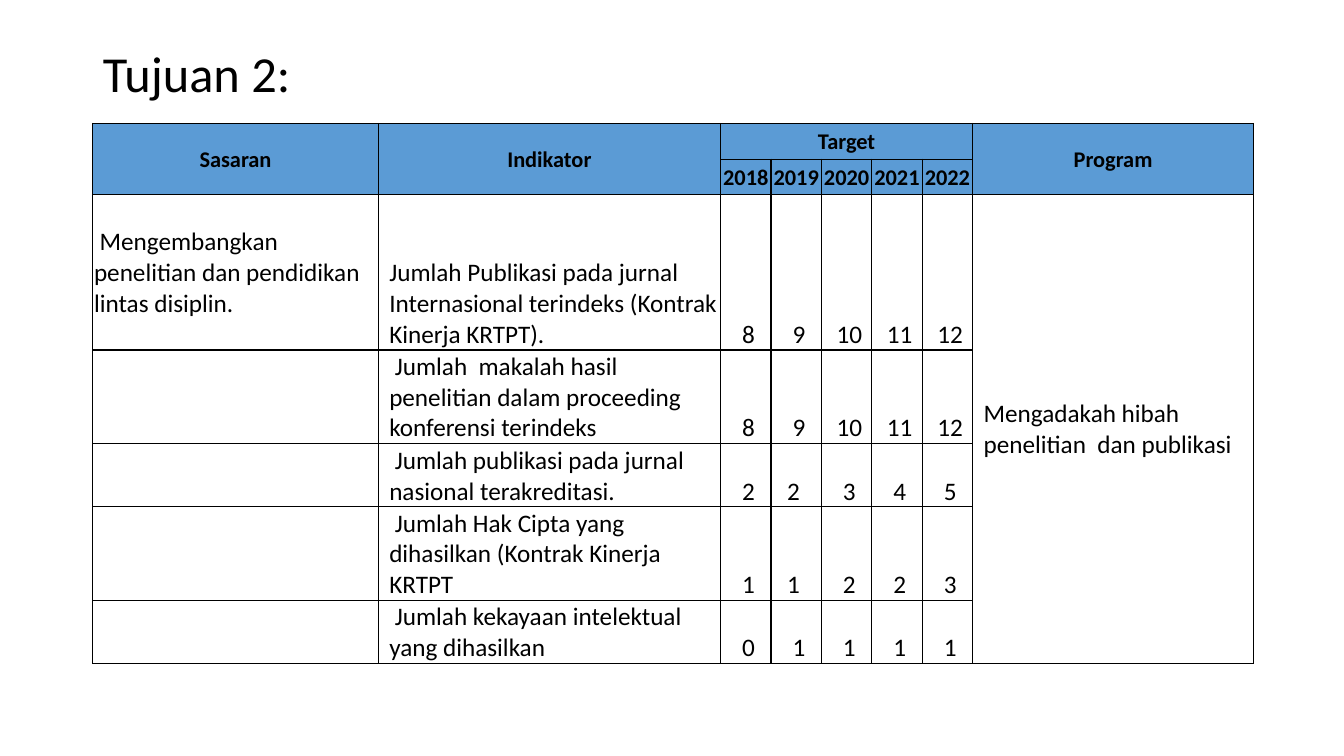
from lxml import etree
from pptx import Presentation
from pptx.dml.color import RGBColor
from pptx.enum.text import MSO_ANCHOR, PP_ALIGN
from pptx.oxml.ns import qn
from pptx.util import Cm, Pt

BLACK = RGBColor(0x00, 0x00, 0x00)
HEADER_BLUE = RGBColor(0x5B, 0x9B, 0xD5)
LEFT, CENTER = PP_ALIGN.LEFT, PP_ALIGN.CENTER
MIDDLE, BOTTOM = MSO_ANCHOR.MIDDLE, MSO_ANCHOR.BOTTOM

TITLE_FONT = {"name": "Calibri", "size": Pt(36), "bold": False}
HEADER_FONT = {"name": "Calibri", "size": Pt(16), "bold": True}
BODY_FONT = {"name": "Calibri", "size": Pt(18), "bold": False}

COLUMN_WIDTHS = [7.19, 8.63] + [1.27] * 5 + [7.08]
ROW_HEIGHTS = [0.9, 0.9, 3.91, 2.36, 1.59, 2.35, 1.59]
SIDE_MARGIN = 0.03
NUMBER_SHIFT = 0.14
TEXT_INDENT = 0.25

YEARS = ["2018", "2019", "2020", "2021", "2022"]
GOAL = "Mengembangkan penelitian dan pendidikan lintas disiplin."
PROGRAM = "Mengadakah hibah penelitian  dan publikasi"
INDICATORS = [
    ("Jumlah Publikasi pada jurnal Internasional terindeks (Kontrak Kinerja KRTPT).",
     [8, 9, 10, 11, 12]),
    ("Jumlah  makalah hasil penelitian dalam proceeding konferensi terindeks",
     [8, 9, 10, 11, 12]),
    ("Jumlah publikasi pada jurnal nasional terakreditasi.", [2, 2, 3, 4, 5]),
    ("Jumlah Hak Cipta yang dihasilkan (Kontrak Kinerja KRTPT", [1, 1, 2, 2, 3]),
    ("Jumlah kekayaan intelektual yang dihasilkan", [0, 1, 1, 1, 1]),
]
# Row and column of the numbers that sit left of the centre
LEFT_SHIFTED = {(4, 3), (5, 3)}


def format_font(font, values):
    for name, value in values.items():
        setattr(font, name, value)
    font.color.rgb = BLACK


def add_title(slide, text):
    title = slide.shapes.title
    title.left, title.top, title.width, title.height = Cm(2.34), Cm(1.02), Cm(29.21), Cm(1.8)
    title.text_frame.text = text
    title.text_frame.vertical_anchor = MIDDLE
    paragraph = title.text_frame.paragraphs[0]
    paragraph.alignment = LEFT
    paragraph.line_spacing = 0.9
    format_font(paragraph.font, TITLE_FONT)


def add_borders(cell):
    properties = cell._tc.get_or_add_tcPr()
    for side in ("a:lnL", "a:lnR", "a:lnT", "a:lnB"):
        line = etree.SubElement(properties, qn(side), w=str(Pt(1)))
        fill = etree.SubElement(line, qn("a:solidFill"))
        etree.SubElement(fill, qn("a:srgbClr"), val=str(BLACK))


def write_cell(cell, text, font=BODY_FONT, alignment=LEFT, anchor=BOTTOM,
               indent=0, first_line=0):
    cell.text = text
    cell.vertical_anchor = anchor
    paragraph = cell.text_frame.paragraphs[0]
    paragraph.alignment = alignment
    if indent or first_line:
        properties = paragraph._p.get_or_add_pPr()
        properties.set("marL", str(Cm(indent)))
        properties.set("indent", str(Cm(first_line)))
    format_font(paragraph.font, font)


def add_table(slide):
    shape = slide.shapes.add_table(
        len(ROW_HEIGHTS), len(COLUMN_WIDTHS), Cm(2.34), Cm(3.11),
        Cm(sum(COLUMN_WIDTHS)), Cm(sum(ROW_HEIGHTS)))
    table = shape.table
    table.first_row = table.horz_banding = False
    for column, width in zip(table.columns, COLUMN_WIDTHS):
        column.width = Cm(width)
    for index, (row, height) in enumerate(zip(table.rows, ROW_HEIGHTS)):
        row.height = Cm(height)
        for cell in row.cells:
            cell.margin_left = cell.margin_right = cell.margin_top = Cm(SIDE_MARGIN)
            cell.margin_bottom = 0
            add_borders(cell)
            if index < 2:
                cell.fill.solid()
                cell.fill.fore_color.rgb = HEADER_BLUE
            else:
                cell.fill.background()
    return table


def fill_header(table):
    for column in (0, 1, 7):
        table.cell(0, column).merge(table.cell(1, column))
    table.cell(0, 2).merge(table.cell(0, 6))
    headings = [(0, 0, "Sasaran"), (0, 1, "Indikator"), (0, 2, "Target"), (0, 7, "Program")]
    headings += [(1, column, year) for column, year in enumerate(YEARS, 2)]
    for row, column, text in headings:
        write_cell(table.cell(row, column), text, HEADER_FONT, CENTER, MIDDLE)


def fill_body(table):
    table.cell(2, 7).merge(table.cell(6, 7))
    write_cell(table.cell(2, 0), GOAL, anchor=MIDDLE, first_line=NUMBER_SHIFT)
    write_cell(table.cell(2, 7), PROGRAM, anchor=MIDDLE, indent=TEXT_INDENT)
    for row, (indicator, targets) in enumerate(INDICATORS, 2):
        first_line = NUMBER_SHIFT if row > 2 else 0
        write_cell(table.cell(row, 1), indicator, indent=TEXT_INDENT, first_line=first_line)
        for column, target in enumerate(targets, 2):
            cell = table.cell(row, column)
            write_cell(cell, str(target), alignment=CENTER)
            side = "margin_right" if (row, column) in LEFT_SHIFTED else "margin_left"
            setattr(cell, side, Cm(SIDE_MARGIN + NUMBER_SHIFT))


def main():
    presentation = Presentation()
    presentation.slide_width, presentation.slide_height = Cm(33.87), Cm(19.05)
    slide = presentation.slides.add_slide(presentation.slide_layouts[5])
    add_title(slide, "Tujuan 2:")

    # Goals, indicators and yearly targets
    table = add_table(slide)
    fill_header(table)
    fill_body(table)
    presentation.save("out.pptx")


if __name__ == "__main__":
    main()
